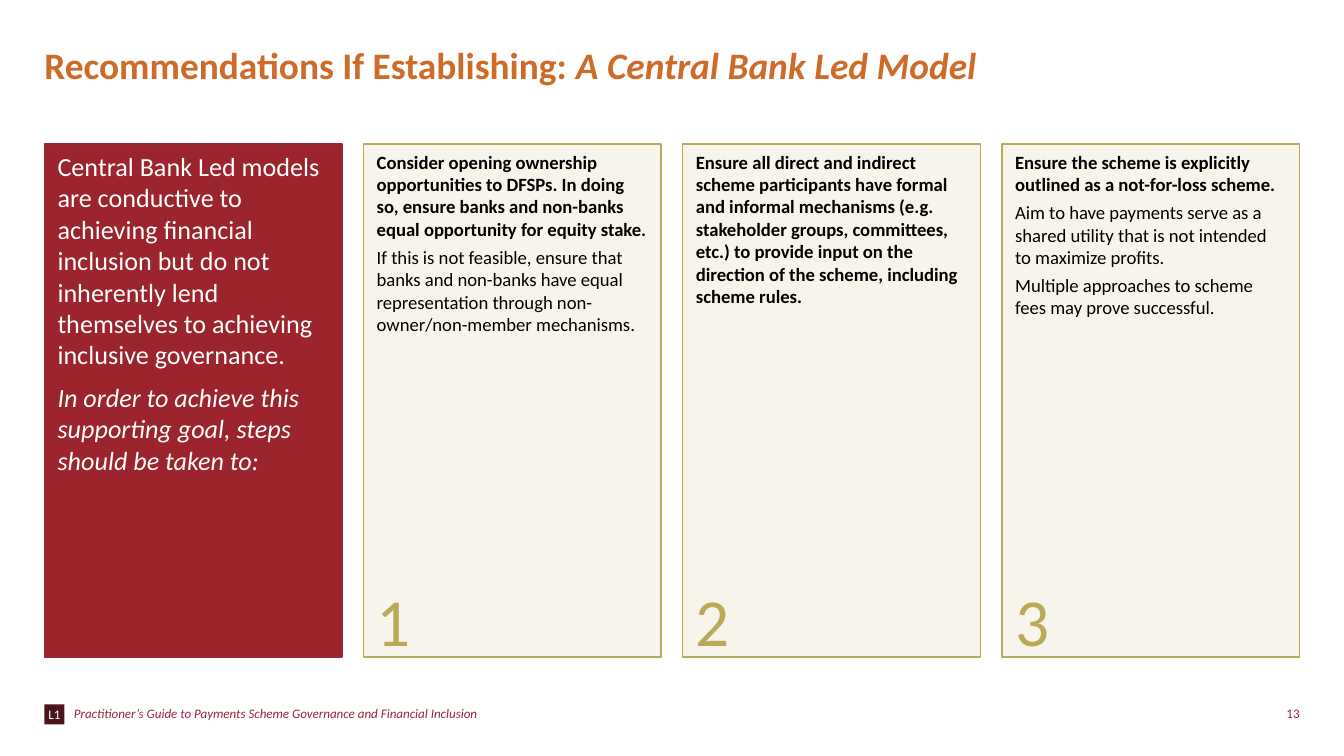
import pptx
import pptx.util
import pptx.dml.color
import pptx.enum.shapes
import pptx.enum.text

Inches = pptx.util.Inches
RGBColor = pptx.dml.color.RGBColor
ALIGN = pptx.enum.text.PP_ALIGN
ANCHOR = pptx.enum.text.MSO_ANCHOR

FONT = "Calibri"
ORANGE = RGBColor(0xCE, 0x6B, 0x29)
RED = RGBColor(0x9B, 0x24, 0x2D)
CRIMSON = RGBColor(0x98, 0x27, 0x3B)
MAROON = RGBColor(0x4C, 0x14, 0x1D)
CREAM = RGBColor(0xF7, 0xF5, 0xEB)
GOLD = RGBColor(0xBA, 0xAA, 0x58)
WHITE = RGBColor(0xFF, 0xFF, 0xFF)
BLACK = RGBColor(0x00, 0x00, 0x00)

TITLE = [("Recommendations If Establishing: ", "b"), ("A Central Bank Led Model", "bi")]
INTRO = [
    [("Central Bank Led models are conductive to achieving financial inclusion but do not "
      "inherently lend themselves to achieving inclusive governance.", "")],
    [("In order to achieve this supporting goal, steps should be taken to:", "i")],
]
STEPS = [
    [
        [("Consider opening ownership opportunities to DFSPs. In doing so, ensure banks and "
          "non-banks equal opportunity for equity stake.", "b")],
        [("If this is not feasible, ensure that banks and non-banks have equal representation "
          "through non-owner/non-member mechanisms.", "")],
    ],
    [
        [("Ensure all direct and indirect scheme participants have formal and informal "
          "mechanisms (e.g. stakeholder groups, committees, etc.) to provide input on the "
          "direction of the scheme, including scheme rules.", "b")],
    ],
    [
        [("Ensure the scheme is explicitly outlined as a not-for-loss scheme.", "b")],
        [("Aim to have payments serve as a shared utility that is not intended to maximize "
          "profits.", "")],
        [("Multiple approaches to scheme fees may prove successful.", "")],
    ],
]
BADGE = "L1"
FOOTER = "Practitioner’s Guide to Payments Scheme Governance and Financial Inclusion"
PAGE_NUMBER = "13"

LEFT, RIGHT, GAP = 0.33, 9.67, 0.16
CARD_TOP, CARD_HEIGHT = 1.07, 3.82
CARD_WIDTH = (RIGHT - LEFT - GAP * len(STEPS)) / (len(STEPS) + 1)
PITCH = CARD_WIDTH + GAP
NUMBER_TOP, NUMBER_HEIGHT = 4.25, 0.71
NO_INSETS = (0, 0, 0, 0)


def add_text(page, paragraphs, at, size, color, fill=None, line=None, align=ALIGN.LEFT,
             anchor=ANCHOR.TOP, insets=(0.1, 0.05, 0.1, 0.05), after=0):
    place = [Inches(value) for value in at]
    if fill is None:
        box = page.shapes.add_textbox(*place)
    else:
        box = page.shapes.add_shape(pptx.enum.shapes.MSO_SHAPE.RECTANGLE, *place)
        box.shadow.inherit = False
        box.fill.solid()
        box.fill.fore_color.rgb = fill
        if line is None:
            box.line.fill.background()
        else:
            box.line.color.rgb = line
            box.line.width = pptx.util.Pt(0.75)
    frame = box.text_frame
    frame.word_wrap = True
    frame.vertical_anchor = anchor
    (frame.margin_left, frame.margin_top,
     frame.margin_right, frame.margin_bottom) = [Inches(value) for value in insets]
    for index, spans in enumerate(paragraphs):
        para = frame.add_paragraph() if index else frame.paragraphs[0]
        para.alignment = align
        para.space_after = pptx.util.Pt(after)
        for text, style in spans:
            span = para.add_run()
            span.text = text
            span.font.name = FONT
            span.font.size = pptx.util.Pt(size)
            span.font.color.rgb = color
            span.font.bold = "b" in style
            span.font.italic = "i" in style


def main():
    deck = pptx.Presentation()
    deck.slide_width = Inches(10)
    deck.slide_height = deck.slide_width * 9 // 16
    page = deck.slides.add_slide(deck.slide_layouts[6])

    add_text(page, [TITLE], (LEFT, 0.31, 8.04, 0.34), 20, ORANGE,
             anchor=ANCHOR.MIDDLE, insets=NO_INSETS)
    add_text(page, INTRO, (LEFT, CARD_TOP, CARD_WIDTH, CARD_HEIGHT), 14, WHITE,
             fill=RED, line=CRIMSON, after=6)
    for number, step in enumerate(STEPS, 1):
        left = LEFT + number * PITCH
        add_text(page, step, (left, CARD_TOP, CARD_WIDTH, CARD_HEIGHT), 10, BLACK,
                 fill=CREAM, line=GOLD, after=3)
        add_text(page, [[(str(number), "")]], (left, NUMBER_TOP, CARD_WIDTH, NUMBER_HEIGHT),
                 36, GOLD, anchor=ANCHOR.BOTTOM, after=3)

    add_text(page, [[(BADGE, "")]], (LEFT, 5.24, 0.15, 0.15), 7, WHITE, fill=MAROON,
             align=ALIGN.CENTER, anchor=ANCHOR.MIDDLE, insets=NO_INSETS)
    add_text(page, [[(FOOTER, "i")]], (0.55, 5.25, 3.38, 0.12), 7, CRIMSON,
             anchor=ANCHOR.MIDDLE, insets=(0, 0, 0.1, 0))
    add_text(page, [[(PAGE_NUMBER, "")]], (RIGHT - 0.34, 5.25, 0.34, 0.12), 7, CRIMSON,
             align=ALIGN.RIGHT, anchor=ANCHOR.MIDDLE, insets=NO_INSETS)
    deck.save("out.pptx")


if __name__ == "__main__":
    main()
